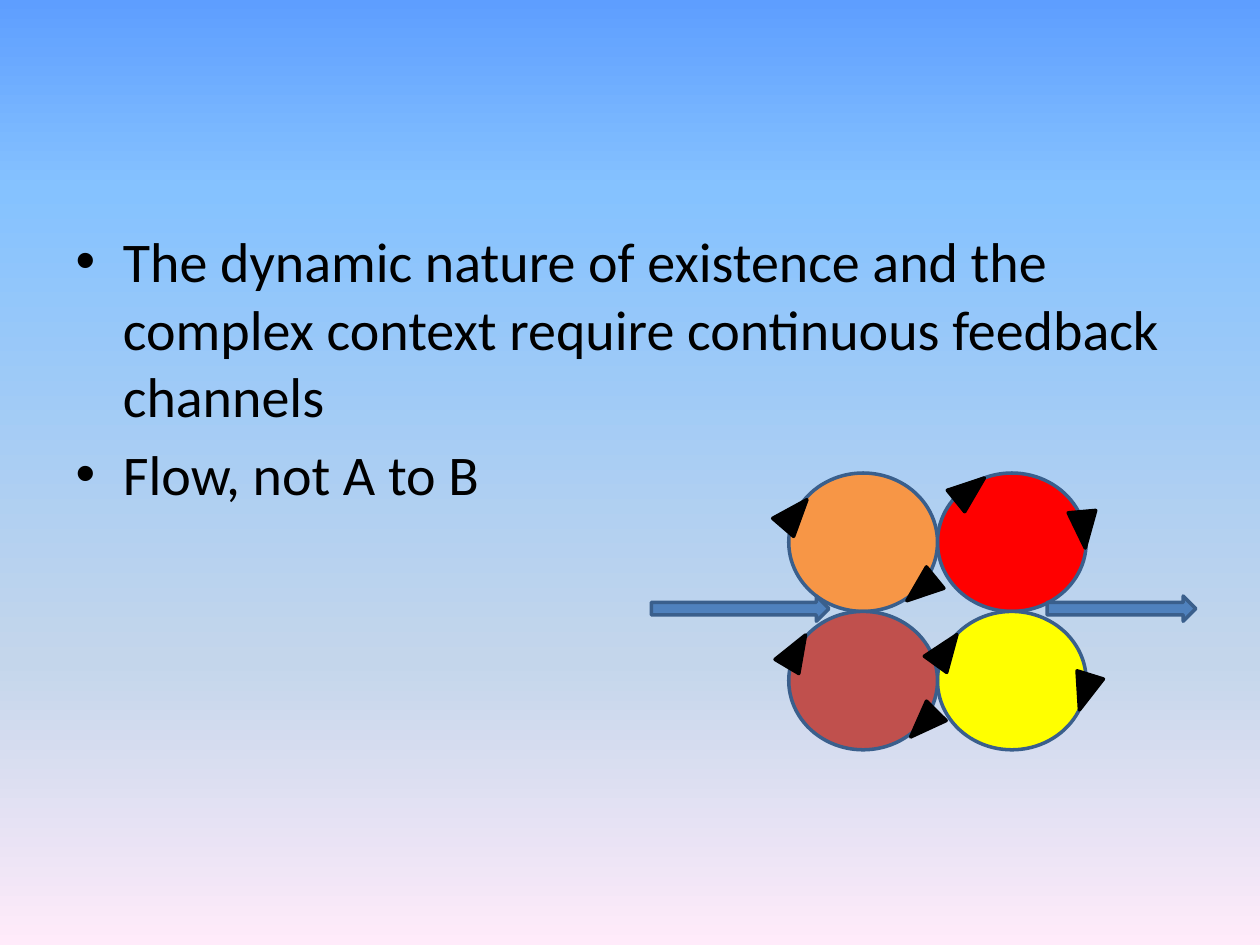
from lxml import etree
from pptx import Presentation
from pptx.dml.color import RGBColor
from pptx.enum.shapes import MSO_SHAPE
from pptx.oxml.ns import qn
from pptx.util import Pt

OVAL = MSO_SHAPE.OVAL
TRIANGLE = MSO_SHAPE.ISOSCELES_TRIANGLE
ARROW = MSO_SHAPE.RIGHT_ARROW

BULLETS = [
    "The dynamic nature of existence and the complex context require continuous feedback channels",
    "Flow, not A to B",
]
GRADIENT = [(0, "5E9EFF"), (20, "85C2FF"), (70, "C4D6EB"), (100, "FFEBFA")]
OUTLINE = "3A5F8C"
WHEELS = [(1, 0, "FF0000"), (0, 0, "F79646"), (1, 1, "FFFF00"), (0, 1, "C0504D")]
WHEEL_LEFT, WHEEL_TOP, WHEEL_W, WHEEL_H = 450.7, 270.3, 85, 79.1
HEAD_W, HEAD_H = 15.8, 20.9
HEADS = [
    (611.3, 292.3, 174.9), (518.4, 326.2, 230.8), (546.5, 269.3, 51), (612, 385.2, 197.2),
    (447.1, 361.4, 30.6), (446.4, 283, 40.7), (519.8, 403.2, 224.6), (532.8, 360.7, 35.9),
]
FLOW_TOP, FLOW_H = 340.6, 14.4
FLOWS = [(372.2, 101.5), (598.3, 85)]


def rgb(value):
    """Turn a hex string into a colour."""
    return RGBColor.from_string(value)


def set_background(s, stops):
    """Fill the slide from top to bottom with the gradient stops."""
    fill = s.background.fill
    fill.gradient()
    fill.gradient_angle = 270
    gs_list = next(s._element.iter(qn("a:gsLst")))
    for gs in list(gs_list):
        gs_list.remove(gs)
    for pos, color in stops:
        gs = etree.SubElement(gs_list, qn("a:gs"), pos=str(pos * 1000))
        etree.SubElement(gs, qn("a:srgbClr"), val=color)


def add_text(p, text, size=32, font="Calibri", color="000000"):
    """Write one formatted run into a paragraph."""
    r = p.add_run()
    r.text = text
    r.font.size = Pt(size)
    r.font.name = font
    r.font.color.rgb = rgb(color)


def add_shape(s, kind, box, fill, line=OUTLINE, rotation=0):
    """Add a filled and outlined preset shape."""
    sp = s.shapes.add_shape(kind, *map(Pt, box))
    sp.shadow.inherit = False
    sp.fill.solid()
    sp.fill.fore_color.rgb = rgb(fill)
    sp.line.color.rgb = rgb(line)
    sp.line.width = Pt(2)
    sp.rotation = rotation


def main():
    """Build the slide and save it."""
    prs = Presentation()
    prs.slide_width, prs.slide_height = Pt(720), Pt(540)
    s = prs.slides.add_slide(prs.slide_layouts[1])
    set_background(s, GRADIENT)

    title = s.shapes.title._element
    title.getparent().remove(title)
    body = s.placeholders[1]
    body.left, body.top, body.width, body.height = map(Pt, (36, 126, 648, 356.4))
    tf = body.text_frame
    for i, text in enumerate(BULLETS):
        add_text(tf.add_paragraph() if i else tf.paragraphs[0], text)

    for col, row, color in WHEELS:
        left, top = WHEEL_LEFT + col * WHEEL_W, WHEEL_TOP + row * WHEEL_H
        add_shape(s, OVAL, (left, top, WHEEL_W, WHEEL_H), color)
    for left, top, rotation in HEADS:
        add_shape(s, TRIANGLE, (left, top, HEAD_W, HEAD_H), "000000", "000000", rotation)
    for left, width in FLOWS:
        add_shape(s, ARROW, (left, FLOW_TOP, width, FLOW_H), "4F81BD")

    prs.save("out.pptx")


if __name__ == "__main__":
    main()
